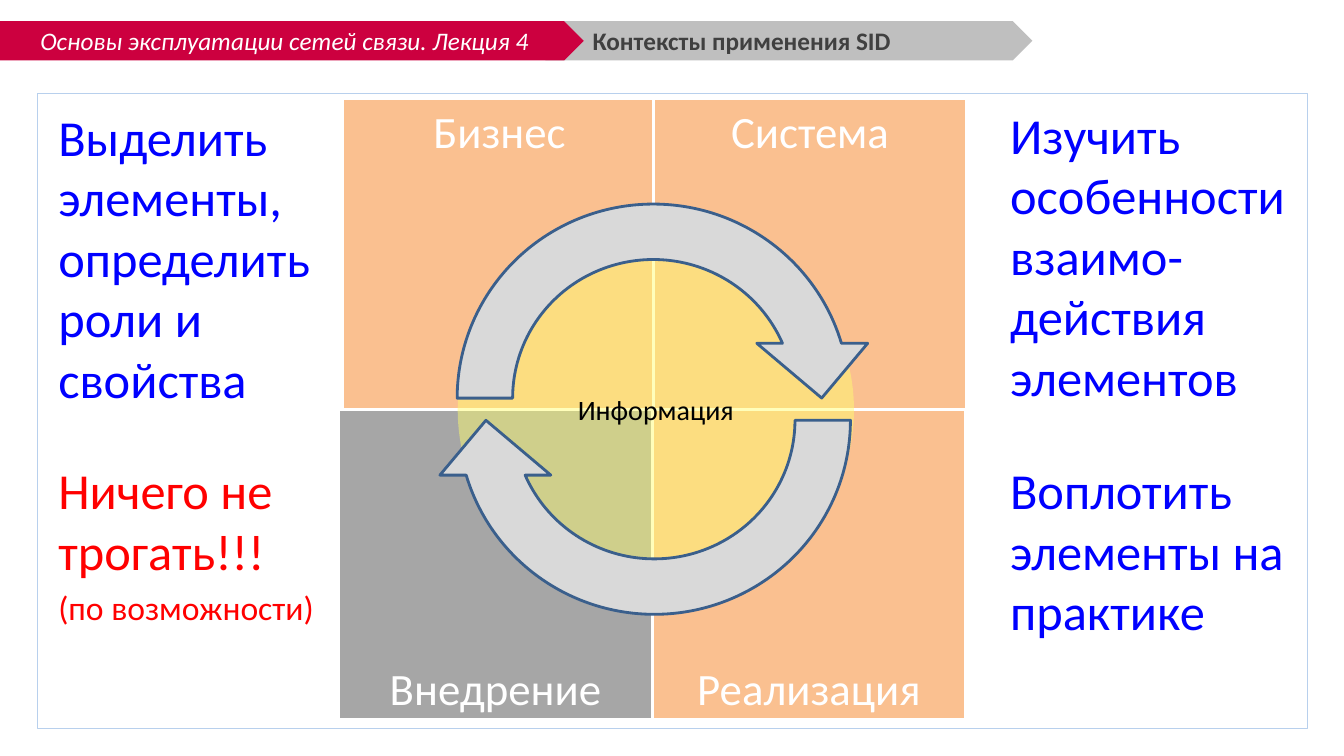
from lxml import etree
from pptx import Presentation
from pptx.dml.color import RGBColor
from pptx.enum.shapes import MSO_SHAPE
from pptx.enum.text import MSO_ANCHOR, PP_ALIGN
from pptx.oxml.ns import qn
from pptx.util import Inches, Pt

RECTANGLE, PENTAGON = MSO_SHAPE.RECTANGLE, MSO_SHAPE.PENTAGON
OVAL, CIRCULAR_ARROW = MSO_SHAPE.OVAL, MSO_SHAPE.CIRCULAR_ARROW
TOP, MIDDLE, BOTTOM = MSO_ANCHOR.TOP, MSO_ANCHOR.MIDDLE, MSO_ANCHOR.BOTTOM
LEFT, CENTER = PP_ALIGN.LEFT, PP_ALIGN.CENTER

FONT = "Calibri"
COLORS = {
    "white": "FFFFFF", "black": "000000", "dark": "404040",
    "crimson": "CC003F", "silver": "BFBFBF", "frame": "B8D0ED",
    "peach": "FAC090", "gray": "A6A6A6", "yellow": "FFFE6E",
    "arrow": "D9D9D9", "outline": "3A5F8C",
    "blue": "0000FF", "red": "FF0000",
}


def color(name):
    return RGBColor.from_string(COLORS[name])


def add_shape(slide, kind, box, fill=None, line=None, line_width=2):
    shape = slide.shapes.add_shape(kind, *map(Inches, box))
    shape.shadow.inherit = False
    if fill:
        shape.fill.solid()
        shape.fill.fore_color.rgb = color(fill)
    else:
        shape.fill.background()
    if line:
        shape.line.color.rgb = color(line)
        shape.line.width = Pt(line_width)
    else:
        shape.line.fill.background()
    return shape


def write(shape, lines, ink, align=LEFT, anchor=TOP, bold=False, italic=False):
    """Fill a shape with (text, size) lines, one paragraph each."""
    frame = shape.text_frame
    frame.word_wrap = True
    frame.vertical_anchor = anchor
    frame.text = "\n".join(text for text, _ in lines)
    for index, (paragraph, (_, size)) in enumerate(zip(frame.paragraphs, lines)):
        paragraph.alignment = align
        if index:
            paragraph.space_before = Pt(size * 0.2)
        for run in paragraph.runs:
            font = run.font
            font.name, font.size = FONT, Pt(size)
            font.bold, font.italic = bold, italic
            font.color.rgb = color(ink)


def add_text(slide, box, lines, ink, **style):
    write(slide.shapes.add_textbox(*map(Inches, box)), lines, ink, **style)


def add_header(slide, left, top, height):
    """Two overlapping pentagons: lecture name and slide title."""
    add_shape(slide, PENTAGON, (left + 5.46, top, 4.83, height), "silver")
    lecture = add_shape(slide, PENTAGON, (left, top, 5.84, height), "crimson")
    write(lecture, [("Основы эксплуатации сетей связи. Лекция 4", 18)],
          "white", align=CENTER, anchor=MIDDLE, italic=True)
    add_text(slide, (left + 5.83, top, 4.14, height),
             [("Контексты применения SID", 18)], "dark", anchor=MIDDLE, bold=True)


def add_quadrants(slide, left, top, width, height):
    """Four context tiles; the lower row sits slightly to the left."""
    tiles = [
        ("Бизнес", 0.04, 0, "peach", TOP),
        ("Реализация", width, height, "peach", BOTTOM),
        ("Система", width + 0.01, 0, "peach", TOP),
        ("Внедрение", 0, height, "gray", BOTTOM),
    ]
    for name, dx, dy, fill, anchor in tiles:
        tile = add_shape(slide, RECTANGLE, (left + dx, top + dy, width, height),
                         fill, "white")
        write(tile, [(name, 32)], "white", align=CENTER, anchor=anchor)


def add_cycle(slide, left, top, width, height):
    """Translucent information disc ringed by two half-turn arrows."""
    disc = add_shape(slide, OVAL, (left + 0.28, top + 0.37, 3.93, 3.89), "yellow")
    fill_color = disc.fill._xPr.find(qn("a:solidFill"))[0]
    etree.SubElement(fill_color, qn("a:alpha")).set("val", "47000")
    write(disc, [("Информация", 20)], "black", align=CENTER, anchor=MIDDLE)
    lower, upper = (
        add_shape(slide, CIRCULAR_ARROW, (left + dx, top + dy, width, height),
                  "arrow", "outline")
        for dx, dy in ((0.01, 0.22), (0, 0)))
    transform = lower.element.spPr.find(qn("a:xfrm"))
    transform.set("flipH", "1")
    transform.set("flipV", "1")


def add_notes_column(slide, left, widths, tops, upper, lower, lower_ink):
    """Side column with one text next to each row of tiles."""
    add_text(slide, (left, tops[0], widths[0], 3.03), upper, "blue")
    add_text(slide, (left, tops[1], widths[1], 2.07), lower, lower_ink)


def main():
    presentation = Presentation()
    presentation.slide_width = Inches(13.33)
    presentation.slide_height = Inches(7.5)
    slide = presentation.slides.add_slide(presentation.slide_layouts[6])

    add_shape(slide, RECTANGLE, (0.37, 0.92, 12.6, 6.3),
              line="frame", line_width=0.25)
    add_header(slide, -0.05, 0.21, 0.39)
    add_quadrants(slide, 3.36, 0.98, 3.11, 3.08)
    add_cycle(slide, 4.26, 1.75, 4.44, 4.4)
    add_notes_column(
        slide, 0.48, (2.78, 2.95), (1, 4.51),
        [("Выделить элементы, определить роли и свойства", 36)],
        [("Ничего не трогать!!!", 36), ("(по возможности)", 24)], "red")
    add_notes_column(
        slide, 9.92, (2.95, 2.95), (0.98, 4.51),
        [("Изучить особенности взаимо-действия элементов", 36)],
        [("Воплотить элементы на практике", 36)], "blue")

    presentation.save("out.pptx")


if __name__ == "__main__":
    main()
